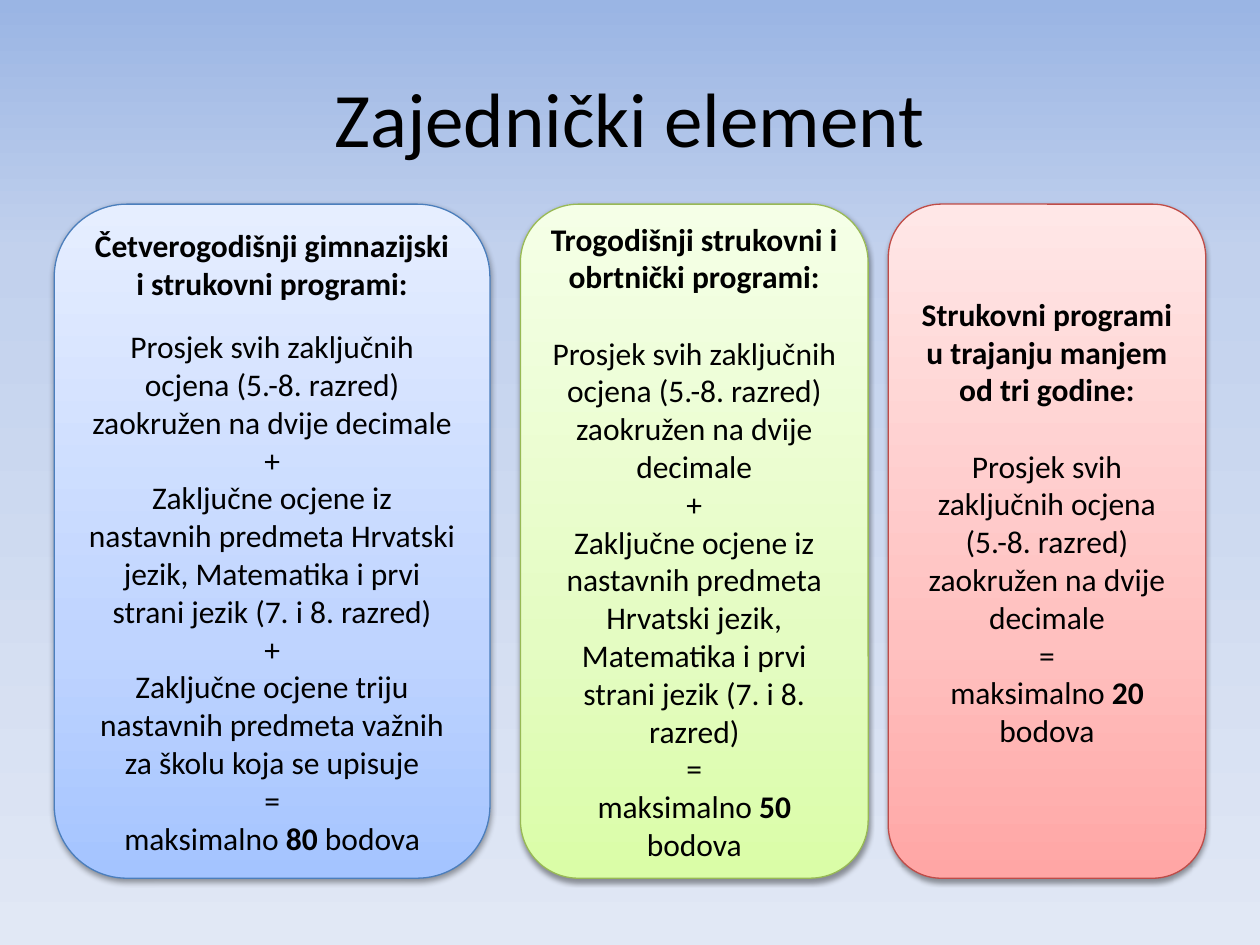
import copy
import lxml.etree
import pptx
import pptx.util
import pptx.dml.color
import pptx.enum.shapes
import pptx.enum.text
import pptx.oxml.ns

Pt = pptx.util.Pt
RGB = pptx.dml.color.RGBColor
qn = pptx.oxml.ns.qn
MIDDLE = pptx.enum.text.MSO_ANCHOR.MIDDLE
CENTER = pptx.enum.text.PP_ALIGN.CENTER
ROUND = pptx.enum.shapes.MSO_SHAPE.ROUNDED_RECTANGLE

BLACK = RGB(0, 0, 0)
SKY = [(0, RGB(0x9A, 0xB5, 0xE4)), (0.27, RGB(0xC2, 0xD1, 0xED)), (1, RGB(0xE1, 0xE8, 0xF5))]
BLUE = [(0, RGB(0xA4, 0xC4, 0xFF)), (0.35, RGB(0xBF, 0xD4, 0xFF)), (1, RGB(0xE6, 0xEE, 0xFF))]
GREEN = [(0, RGB(0xDA, 0xFD, 0xA7)), (0.35, RGB(0xE4, 0xFC, 0xC2)), (1, RGB(0xF5, 0xFF, 0xE7))]
RED = [(0, RGB(0xFF, 0xA6, 0xA5)), (0.35, RGB(0xFF, 0xC0, 0xBF)), (1, RGB(0xFF, 0xE7, 0xE7))]
BLUE_LINE = RGB(0x4B, 0x7E, 0xBC)
GREEN_LINE = RGB(0x98, 0xB9, 0x55)
RED_LINE = RGB(0xBF, 0x4C, 0x48)


def blend(fill, root, stops, angle):
    fill.gradient()
    fill.gradient_angle = angle
    group = next(root.iter(qn("a:gsLst")))
    group.append(copy.deepcopy(group[-1]))
    for stop, (place, color) in zip(fill.gradient_stops, stops):
        stop.position = place
        stop.color.rgb = color


def style(para, size):
    para.alignment = CENTER
    para.font.name = "Calibri"
    para.font.size = Pt(size)
    para.font.color.rgb = BLACK


deck = pptx.Presentation()
deck.slide_width, deck.slide_height = Pt(720), Pt(540)
slide = deck.slides.add_slide(deck.slide_layouts[6])
blend(slide.background.fill, slide._element, SKY, 270)

title = slide.shapes.add_textbox(Pt(36), Pt(21.6), Pt(648), Pt(90)).text_frame
title.word_wrap = True
title.vertical_anchor = MIDDLE
title.text = "Zajednički element"
style(title.paragraphs[0], 44)

MEAN = "Prosjek svih zaključnih ocjena (5.-8. razred) zaokružen na dvije decimale"
CORE = "Zaključne ocjene iz nastavnih predmeta Hrvatski jezik, Matematika i prvi strani jezik (7. i 8. razred)"
EXTRA = "Zaključne ocjene triju nastavnih predmeta važnih za školu koja se upisuje"

cards = [
    (31, 249, BLUE, BLUE_LINE, "Četverogodišnji gimnazijski i strukovni programi:",
     14.6, [MEAN, "+", CORE, "+", EXTRA, "="], "80", 3.6),
    (297.4, 198.7, GREEN, GREEN_LINE, "Trogodišnji strukovni i obrtnički programi:",
     22, [MEAN, "+", CORE, "="], "50", 3.6),
    (507.6, 181.4, RED, RED_LINE, "Strukovni programi u trajanju manjem od tri godine:",
     22, [MEAN, "="], "20", 25.6),
]

for left, width, stops, edge, head, gap, terms, score, foot in cards:
    card = slide.shapes.add_shape(ROUND, Pt(left), Pt(116.64), Pt(width), Pt(385.2))
    blend(card.fill, card._element, stops, 90)
    card.line.color.rgb = edge
    card.line.width = Pt(0.75)
    card.shadow.inherit = False
    glow = lxml.etree.SubElement(
        next(card._element.iter(qn("a:effectLst"))), qn("a:outerShdw"),
        blurRad="40000", dist="20000", dir="5400000", rotWithShape="0")
    tint = lxml.etree.SubElement(glow, qn("a:srgbClr"), val="000000")
    lxml.etree.SubElement(tint, qn("a:alpha"), val="38000")

    frame = card.text_frame
    frame.word_wrap = True
    frame.vertical_anchor = MIDDLE
    frame.margin_bottom = Pt(foot)
    frame.text = "\n".join([head] + terms)
    total = frame.add_paragraph()
    for text, bold in [("maksimalno ", False), (score, True), (" bodova", False)]:
        run = total.add_run()
        run.text = text
        run.font.bold = bold
    for para in frame.paragraphs:
        style(para, 18)
    frame.paragraphs[0].font.bold = True
    frame.paragraphs[0].space_after = Pt(gap)

deck.save("out.pptx")
